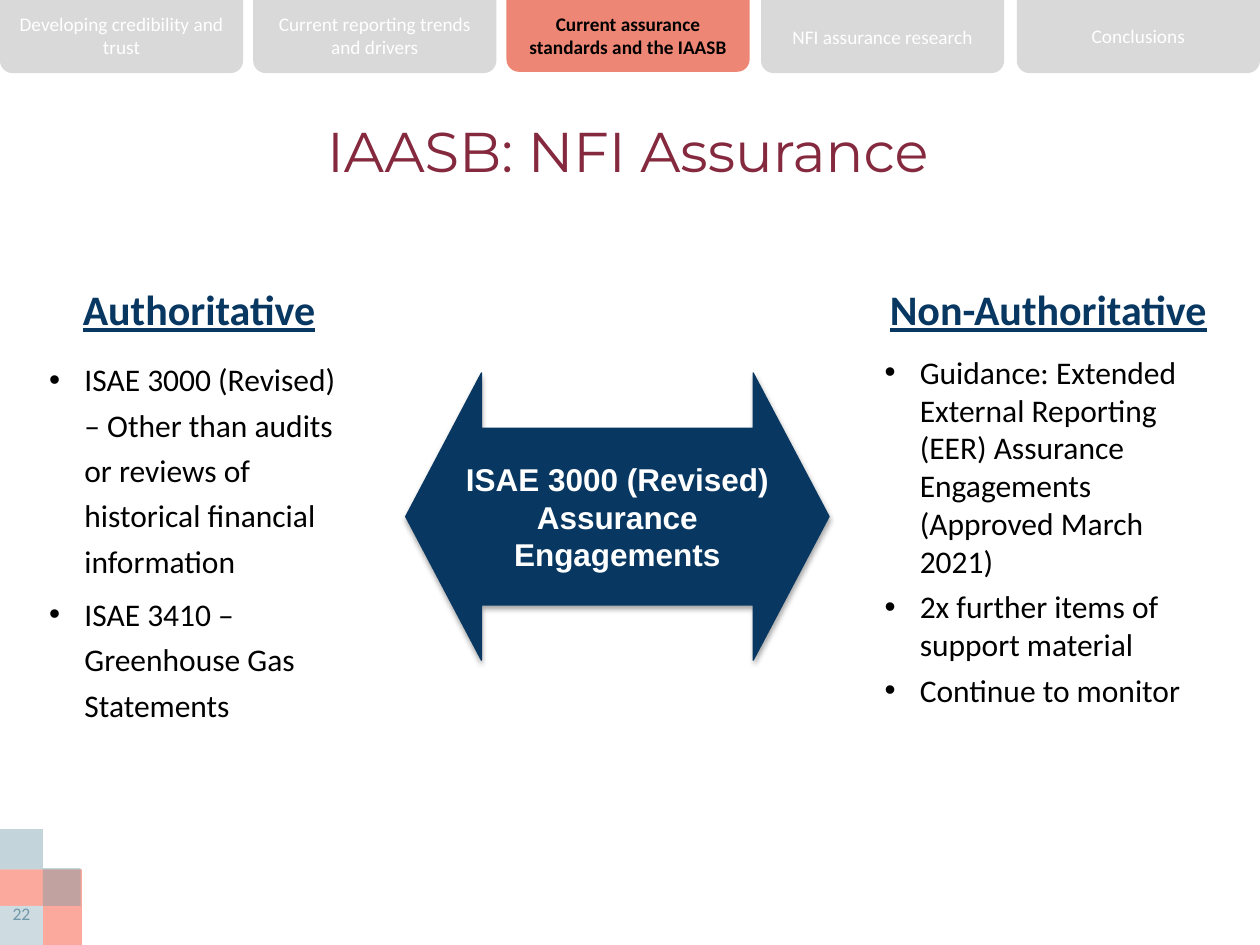
"""Build the slide on authoritative and non-authoritative NFI assurance material."""
from lxml import etree
from pptx import Presentation
from pptx.dml.color import RGBColor
from pptx.enum.shapes import MSO_SHAPE
from pptx.enum.text import MSO_ANCHOR, MSO_AUTO_SIZE, PP_ALIGN
from pptx.oxml import parse_xml
from pptx.oxml.ns import nsdecls, qn
from pptx.util import Inches, Pt

NAVY, STEEL, GREY, WHITE, BLACK = "083862", "7198A9", "D9D9D9", "FFFFFF", "000000"


def add_block(kind, box, color):
    block = slide.shapes.add_shape(kind, *map(Inches, box))
    block.shadow.inherit = False
    block.fill.solid()
    block.fill.fore_color.rgb = RGBColor.from_string(color)
    block.line.fill.background()
    return block


def write(frame, lines, size, color, font="Calibri", bold=False, underline=False,
          align=PP_ALIGN.CENTER, anchor=MSO_ANCHOR.TOP, bullet=False, spacing=1.0, gap=0):
    frame.word_wrap = True
    frame.auto_size = MSO_AUTO_SIZE.NONE
    frame.vertical_anchor = anchor
    for i, line in enumerate(lines):
        paragraph = frame.paragraphs[0] if i == 0 else frame.add_paragraph()
        if bullet:
            properties = paragraph._p.get_or_add_pPr()
            properties.set("marL", str(Inches(0.28)))
            properties.set("indent", str(-Inches(0.28)))
            etree.SubElement(properties, qn("a:buFont")).set("typeface", "Arial")
            etree.SubElement(properties, qn("a:buChar")).set("char", "•")
        paragraph.alignment = align
        paragraph.line_spacing = spacing
        paragraph.space_before = Pt(gap if i else 0)
        run = paragraph.add_run()
        run.text = line
        run.font.name = font
        run.font.size = Pt(size)
        run.font.bold = bold
        run.font.underline = underline
        run.font.color.rgb = RGBColor.from_string(color)


deck = Presentation()
deck.slide_width, deck.slide_height = Inches(10), Inches(7.5)
slide = deck.slides.add_slide(deck.slide_layouts[4])
title, left_heading, left_list, right_heading, right_list = slide.placeholders

for holder, box in [
    (title, (0.12, 0.69, 9.73, 1)),
    (left_heading, (0.29, 2.2, 2.58, 0.5)),
    (left_list, (0.29, 2.75, 2.58, 3.03)),
    (right_heading, (6.92, 2.2, 2.8, 0.55)),
    (right_list, (6.92, 2.75, 2.8, 2.89)),
]:
    holder.left, holder.top, holder.width, holder.height = map(Inches, box)

write(title.text_frame, ["IAASB: NFI Assurance"], 32, "85293F", "Montserrat",
      anchor=MSO_ANCHOR.MIDDLE)
for heading, text in [(left_heading, "Authoritative"), (right_heading, "Non-Authoritative")]:
    write(heading.text_frame, [text], 24, NAVY, bold=True, underline=True)

authoritative = [
    "ISAE 3000 (Revised) – Other than audits or reviews of historical financial information",
    "ISAE 3410 – Greenhouse Gas Statements",
]
non_authoritative = [
    "Guidance: Extended External Reporting (EER) Assurance Engagements (Approved March 2021)",
    "2x further items of support material",
    "Continue to monitor",
]
for bullets, items, spacing in [(left_list, authoritative, 1.2), (right_list, non_authoritative, 1.0)]:
    write(bullets.text_frame, items, 18, BLACK, align=PP_ALIGN.LEFT,
          bullet=True, spacing=spacing, gap=4.5)

for box, color, opacity in [
    ((0, 6.9, 0.65, 0.61), "FAA99C", 100),
    ((0, 7.19, 0.34, 0.32), "CEDBE0", 100),
    ((0, 6.58, 0.34, 0.32), STEEL, 41),
    ((0.34, 6.89, 0.3, 0.3), STEEL, 41),
]:
    tile = add_block(MSO_SHAPE.RECTANGLE, box, color)
    if opacity < 100:
        tint = tile._element.spPr.find(qn("a:solidFill"))[0]
        etree.SubElement(tint, qn("a:alpha")).set("val", str(opacity * 1000))

page_number = slide.shapes.add_textbox(Inches(-0.09), Inches(7.12), Inches(0.52), Inches(0.43))
write(page_number.text_frame, ["22"], 10.1, STEEL)

for left, tab_top, label_top, label_height, label, current in [
    (0, 0, 0.05, 0.47, "Developing credibility and trust", False),
    (2.01, 0, 0.05, 0.47, "Current reporting trends and drivers", False),
    (4.02, -0.01, 0.05, 0.47, "Current assurance standards and the IAASB", True),
    (6.04, 0, 0.15, 0.29, "NFI assurance research", False),
    (8.07, 0, 0.14, 0.29, "Conclusions", False),
]:
    tab = add_block(MSO_SHAPE.ROUND_2_SAME_RECTANGLE, (left, tab_top, 1.93, 0.58),
                    "ED8674" if current else GREY)
    tab.adjustments[0], tab.adjustments[1] = 0, 0.17
    caption = slide.shapes.add_textbox(
        Inches(left), Inches(label_top), Inches(1.93), Inches(label_height))
    write(caption.text_frame, [label], 11, BLACK if current else WHITE, bold=current)

arrow = add_block(MSO_SHAPE.LEFT_RIGHT_ARROW, (3.22, 2.96, 3.36, 2.28), NAVY)
arrow.adjustments[0], arrow.adjustments[1] = 0.615, 0.264
arrow.line.color.rgb = RGBColor.from_string(NAVY)
arrow.line.width = Pt(0.75)
arrow._element.spPr.find(qn("a:effectLst")).append(parse_xml(
    f'<a:outerShdw {nsdecls("a")} blurRad="{Pt(3.1)}" dist="{Pt(1.8)}" dir="5400000" '
    f'rotWithShape="0"><a:srgbClr val="{BLACK}"><a:alpha val="35000"/></a:srgbClr></a:outerShdw>'))
write(arrow.text_frame, ["ISAE 3000 (Revised)", "Assurance Engagements"], 18, WHITE, "Arial",
      bold=True, anchor=MSO_ANCHOR.MIDDLE)

deck.save("out.pptx")
